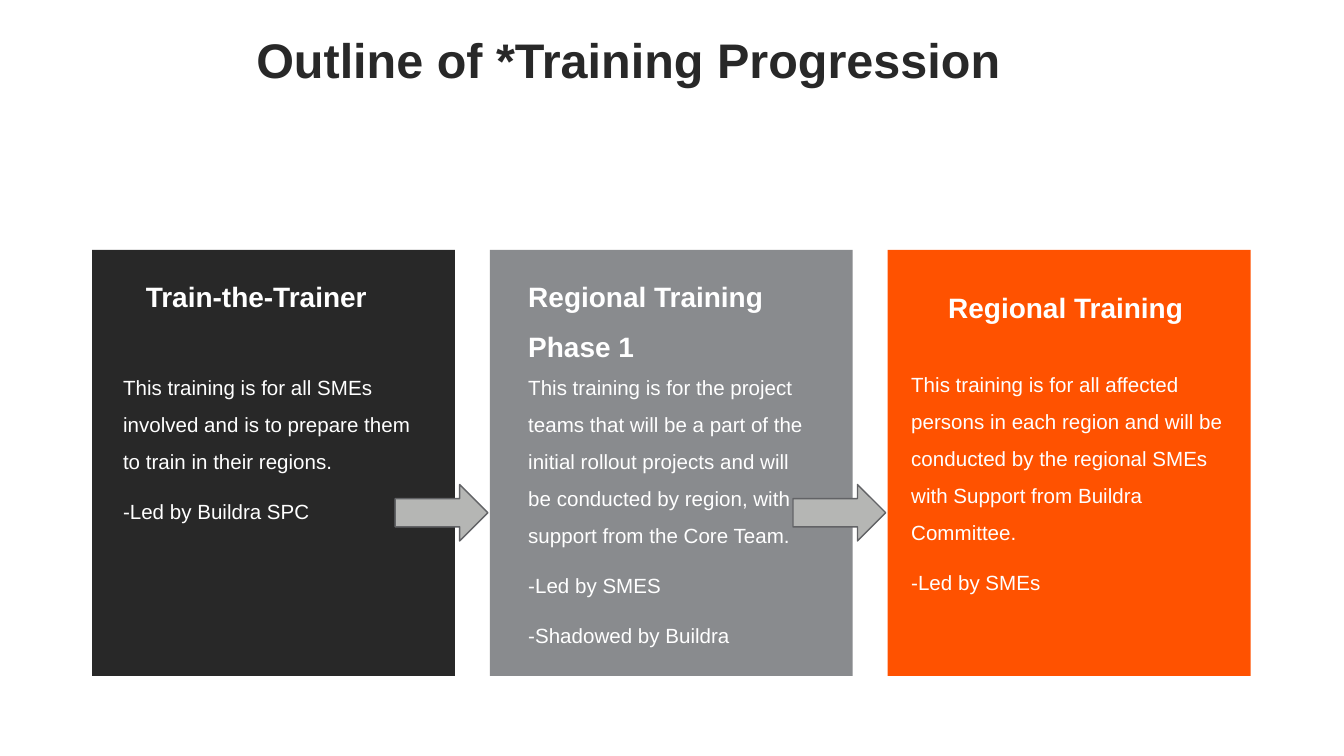
from pptx import Presentation
from pptx.dml.color import RGBColor
from pptx.enum.shapes import MSO_SHAPE
from pptx.enum.text import MSO_ANCHOR, PP_ALIGN
from pptx.util import Emu, Pt

PX = 4572
CARD_LEFT, CARD_STEP = 137, 592

cards = [
    ("282828", (209, 387, 416, 106), "Train-the-Trainer", (175, 540, 476, 476), [
        "This training is for all SMEs involved and is to prepare them to train in their regions.",
        "-Led by Buildra SPC",
    ]),
    ("898B8E", (778, 387, 430, 138), "Regional Training Phase 1", (778, 540, 444, 446), [
        "This training is for the project teams that will be a part of the initial rollout projects "
        "and will be conducted by region, with support from the Core Team.",
        "-Led by SMES",
        "-Shadowed by Buildra",
    ]),
    ("FF5200", (1403, 404, 378, 106), "Regional Training", (1348, 536, 488, 454), [
        "This training is for all affected persons in each region and will be conducted by the "
        "regional SMEs with Support from Buildra Committee.",
        "-Led by SMEs",
    ]),
]


def color(hex_value):
    return RGBColor.from_string(hex_value)


def add_text(page, place, lines, size, hex_value, bold=False, top=4, left=8,
             spacing=1.5, align=PP_ALIGN.LEFT):
    box = page.shapes.add_textbox(*[Emu(value * PX) for value in place])
    frame = box.text_frame
    frame.word_wrap = True
    frame.vertical_anchor = MSO_ANCHOR.TOP
    frame.margin_left, frame.margin_top = Emu(left * PX), Emu(top * PX)
    frame.margin_right, frame.margin_bottom = Emu(8 * PX), Emu(4 * PX)
    frame.text = "\n".join(lines)
    for index, para in enumerate(frame.paragraphs):
        para.alignment = align
        para.line_spacing = spacing
        para.space_before = Pt(7 if index else 0)
        for span in para.runs:
            span.font.name = "Arial"
            span.font.size = Pt(size)
            span.font.bold = bold
            span.font.color.rgb = color(hex_value)


deck = Presentation()
deck.slide_width, deck.slide_height = Emu(2000 * PX), Emu(1125 * PX)
page = deck.slides.add_slide(deck.slide_layouts[6])

for index, (fill, *_) in enumerate(cards):
    place = (CARD_LEFT + index * CARD_STEP, 372, 540, 634)
    card = page.shapes.add_shape(MSO_SHAPE.RECTANGLE, *[Emu(value * PX) for value in place])
    card.shadow.inherit = False
    card.fill.solid()
    card.fill.fore_color.rgb = color(fill)
    card.line.fill.background()

add_text(page, (52, 50, 1776, 146), ["Outline of *Training Progression"], 26, "282828",
         bold=True, left=0, spacing=0.9, align=PP_ALIGN.CENTER)

for fill, heading_place, heading, body_place, body in cards:
    add_text(page, heading_place, [heading], 15, "FFFFFF", bold=True)
    add_text(page, body_place, body, 11, "FFFFFF", top=0)

for index in range(len(cards) - 1):
    place = (588 + index * CARD_STEP, 721, 138, 84)
    arrow = page.shapes.add_shape(MSO_SHAPE.RIGHT_ARROW, *[Emu(value * PX) for value in place])
    arrow.shadow.inherit = False
    arrow.fill.solid()
    arrow.fill.fore_color.rgb = color("B5B6B4")
    arrow.line.color.rgb = color("626366")
    arrow.line.width = Pt(0.75)

deck.save("out.pptx")
